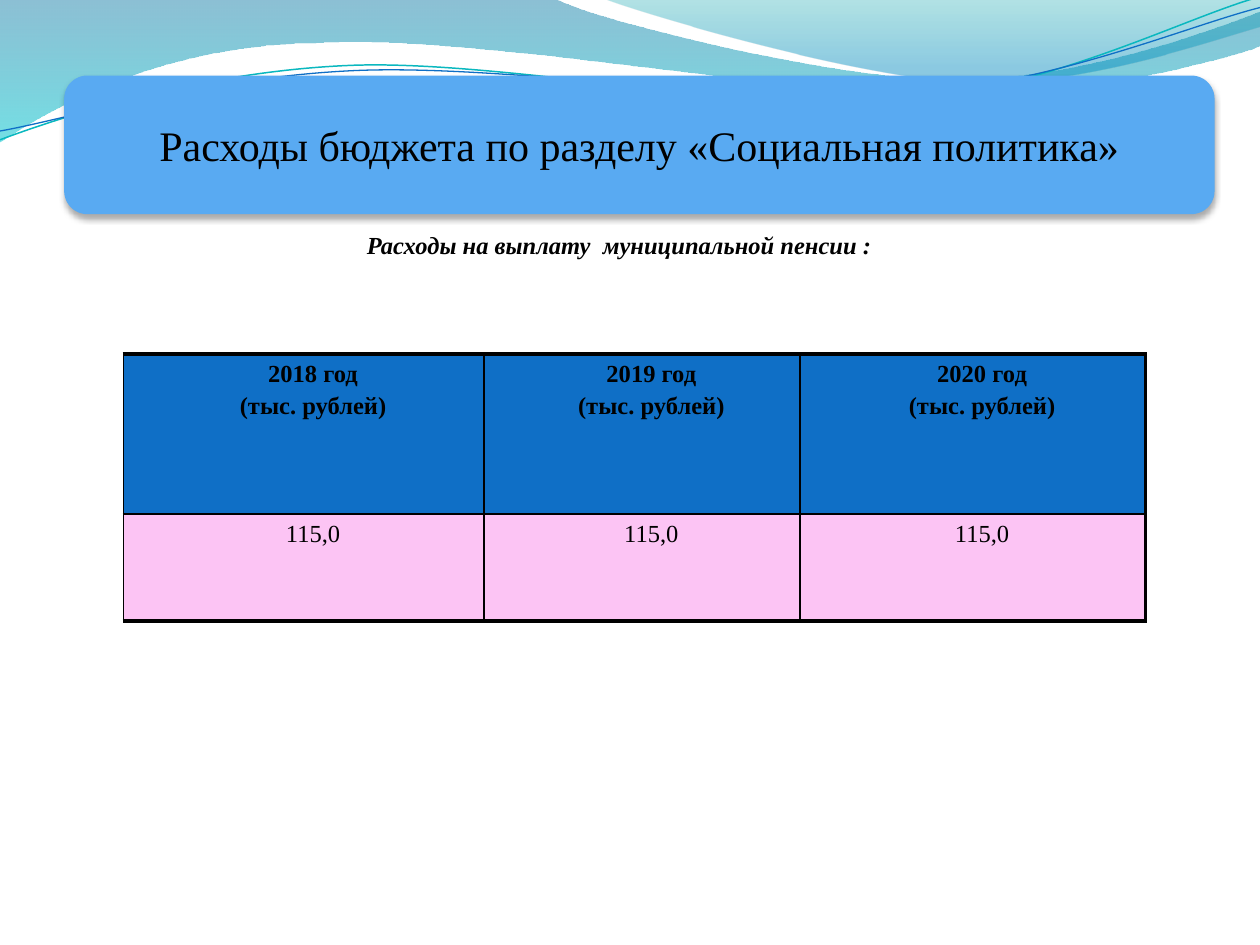
from lxml.etree import SubElement
from pptx import Presentation
from pptx.dml.color import RGBColor
from pptx.enum.shapes import MSO_SHAPE
from pptx.enum.text import MSO_ANCHOR, PP_ALIGN
from pptx.oxml import parse_xml
from pptx.oxml.ns import nsdecls, qn
from pptx.util import Inches, Pt


def color(value):
    return RGBColor.from_string(value)


def write(para, text, size, bold=False, italic=False):
    para.text = text
    para.alignment = PP_ALIGN.CENTER
    para.font.name = "Times New Roman"
    para.font.size = Pt(size)
    para.font.bold = bold
    para.font.italic = italic
    para.font.color.rgb = color("000000")


deck = Presentation()
deck.slide_width = Inches(10)
deck.slide_height = Inches(7.5)
page = deck.slides.add_slide(deck.slide_layouts[6])

waves = [
    ([(0, -0.01), (4.4, -0.01), (4.76, 0.17, 6.64, 0.63, 7.58, 0.63),
      (8.53, 0.63, 9.58, 0.26, 10, 0.09), (10.01, 0.36),
      (9.83, 0.44, 8.7, 0.76, 7.46, 0.75), (6.22, 0.75, 3.82, 0.28, 2.57, 0.34),
      (1.29, 0.35, 0.46, 0.83, -0.01, 1.13), (0, -0.01)],
     [(0, "0074A1", 45), (100, "00C6CF", 55)], None),
    ([(4.79, -0.01), (5.09, 0.11, 6.82, 0.62, 7.69, 0.65),
      (8.56, 0.69, 9.61, 0.32, 10, 0.21), (10, 0), (4.79, -0.01)],
     [(0, "00A1A9", 30), (80, "008BBF", 45)], None),
    ([(0, 1.11), (0.48, 0.93, 1.58, 0.57, 2.77, 0.52),
      (3.95, 0.47, 5.93, 0.89, 7.13, 0.8), (8.33, 0.71, 9.38, 0.15, 9.98, -0.02)],
     None, ("0AB8BF", 0.85)),
    ([(0, 1.04), (0.47, 0.96, 1.64, 0.61, 2.83, 0.56),
      (4.03, 0.51, 5.97, 0.83, 7.17, 0.75), (8.36, 0.67, 9.41, 0.21, 10, 0.06)],
     None, ("0F6FC6", 0.75)),
]
for segments, stops, stroke in waves:
    anchors = [(Inches(segment[-2]), Inches(segment[-1])) for segment in segments]
    builder = page.shapes.build_freeform(*anchors[0], scale=1.0)
    builder.add_line_segments(anchors[1:], close=stops is not None)
    wave = builder.convert_to_shape()
    properties = wave.element.spPr
    for corner, segment in zip(list(properties.iter(qn("a:lnTo"))), segments[1:]):
        if len(segment) == 6:
            curve = parse_xml(f'<a:cubicBezTo {nsdecls("a")}/>')
            for x, y in zip(segment[::2], segment[1::2]):
                SubElement(curve, qn("a:pt"), x=str(Inches(x) - wave.left),
                           y=str(Inches(y) - wave.top))
            corner.getparent().replace(corner, curve)
    wave.shadow.inherit = False
    wave.fill.background()
    if stroke:
        wave.line.color.rgb = color(stroke[0])
        wave.line.width = Pt(stroke[1])
    else:
        wave.line.fill.background()
        marks = "".join(
            f'<a:gs pos="{place * 1000}"><a:srgbClr val="{tone}">'
            f'<a:alpha val="{alpha * 1000}"/></a:srgbClr></a:gs>'
            for place, tone, alpha in stops)
        properties.replace(properties.find(qn("a:noFill")), parse_xml(
            f'<a:gradFill {nsdecls("a")}><a:gsLst>{marks}</a:gsLst>'
            '<a:lin ang="5400000" scaled="0"/></a:gradFill>'))

banner = page.shapes.add_shape(
    MSO_SHAPE.ROUNDED_RECTANGLE, Inches(0.51), Inches(0.6), Inches(9.13), Inches(1.1))
banner.fill.solid()
banner.fill.fore_color.rgb = color("59AAF2")
banner.line.fill.background()
banner.element.spPr.append(parse_xml(
    f'<a:effectLst {nsdecls("a")}><a:outerShdw blurRad="{Pt(3.5)}" dist="{Pt(2.2)}" '
    'dir="5400000" rotWithShape="0"><a:srgbClr val="000000"><a:alpha val="32000"/>'
    '</a:srgbClr></a:outerShdw></a:effectLst>'))
banner.text_frame.vertical_anchor = MSO_ANCHOR.MIDDLE
write(banner.text_frame.paragraphs[0], "Расходы бюджета по разделу «Социальная политика»", 24)

box = page.shapes.add_textbox(Inches(0.27), Inches(1.78), Inches(9.29), Inches(0.34))
box.text_frame.word_wrap = True
write(box.text_frame.paragraphs[0], "Расходы на выплату  муниципальной пенсии :", 14, True, True)

rows = [
    (1.27, "0F6FC6", True, [f"{year} год\n(тыс. рублей)" for year in (2018, 2019, 2020)]),
    (0.85, "FCC4F4", False, ["115,0"] * 3),
]
table = page.shapes.add_table(2, 3, Inches(0.98), Inches(2.81), Inches(8.11), Inches(2.12)).table
table.first_row = table.horz_banding = False
for column, width in zip(table.columns, (2.86, 2.51, 2.74)):
    column.width = Inches(width)
for r, (height, fill, bold, texts) in enumerate(rows):
    table.rows[r].height = Inches(height)
    for c, text in enumerate(texts):
        cell = table.cell(r, c)
        properties = cell._tc.get_or_add_tcPr()
        for side, thick in (("L", False), ("R", c == 2), ("T", r == 0), ("B", r == 1)):
            border = SubElement(properties, qn(f"a:ln{side}"), w=str(Pt(2.25 if thick else 1)))
            SubElement(SubElement(border, qn("a:solidFill")), qn("a:srgbClr"), val="000000")
        cell.fill.solid()
        cell.fill.fore_color.rgb = color(fill)
        for i, line in enumerate(text.split("\n")):
            para = cell.text_frame.add_paragraph() if i else cell.text_frame.paragraphs[0]
            write(para, line, 14, bold)
            para.space_before = Pt(2.8)
            para._p.get_or_add_pPr().set("marL", str(Inches(0.15)))

deck.save("out.pptx")
